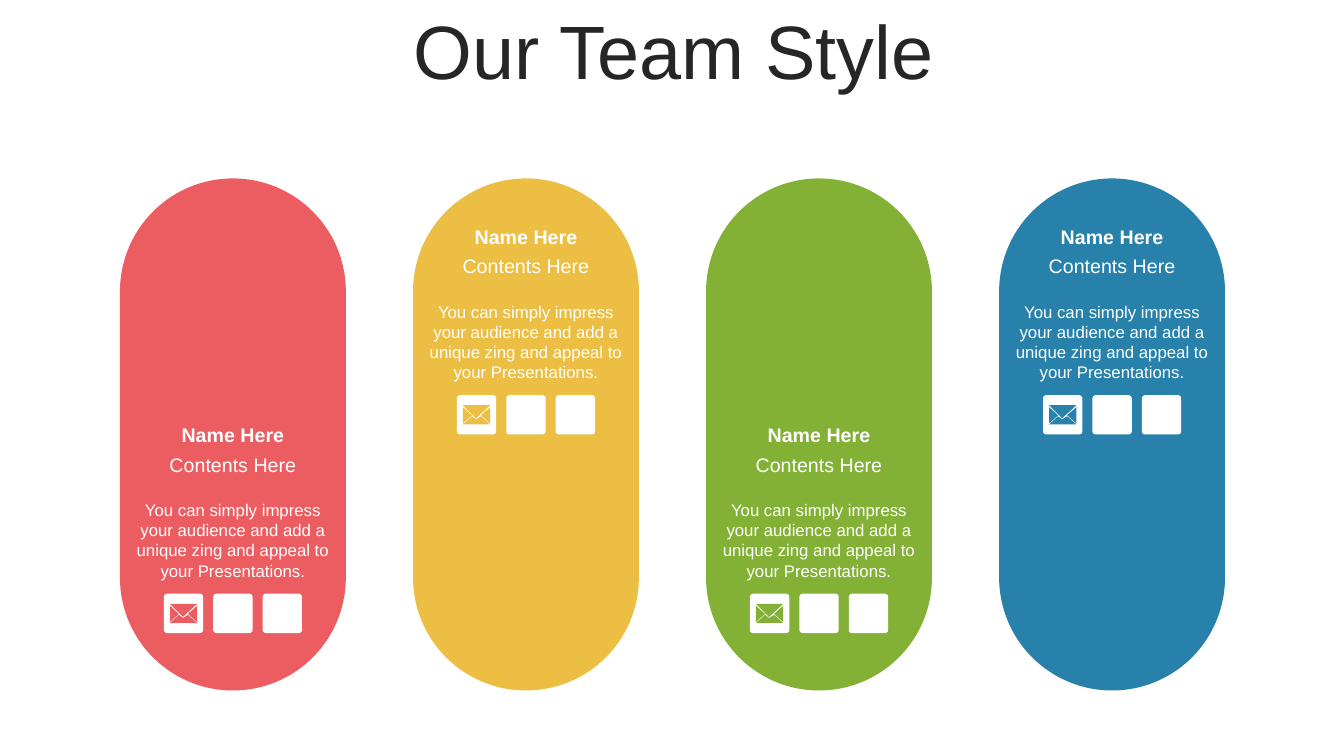
"""Build the team slide with four coloured member pills."""
from dataclasses import dataclass

from pptx import Presentation
from pptx.dml.color import RGBColor
from pptx.enum.shapes import MSO_SHAPE
from pptx.enum.text import MSO_ANCHOR, MSO_AUTO_SIZE, PP_ALIGN
from pptx.util import Inches, Pt

ROUNDED = MSO_SHAPE.ROUNDED_RECTANGLE
MIDDLE, TOP = MSO_ANCHOR.MIDDLE, MSO_ANCHOR.TOP
NO_AUTOFIT = MSO_AUTO_SIZE.NONE
CENTER = PP_ALIGN.CENTER

TITLE = "Our Team Style"
NAME = "Name Here"
ROLE = "Contents Here"
BIO = ("You can simply impress your audience and add a unique zing "
       "and appeal to your Presentations.")
HIGH, LOW = 2.21, 4.18
MEMBERS = [
    (NAME, ROLE, BIO, "EC5D62", LOW),
    (NAME, ROLE, BIO, "EDBE44", HIGH),
    (NAME, ROLE, BIO, "82B135", LOW),
    (NAME, ROLE, BIO, "2781AB", HIGH),
]
ENVELOPE_FOLDS = [
    [(24, 21), (19, 24), (15, 21), (6, 29), (33, 29)],
    [(33, 12), (25, 19), (24, 20), (33, 28)],
    [(6, 12), (6, 28), (15, 20)],
    [(6, 10), (19, 23), (33, 10)],
]


@dataclass(frozen=True)
class Theme:
    font: str = "Arial"
    title_color: str = "262626"
    light: str = "FFFFFF"
    title_size: int = 54
    name_size: int = 14
    bio_size: int = 12


THEME = Theme()
FIRST_LEFT, LAST_LEFT = 1.19, 9.91
PILL_TOP, PILL_WIDTH, PILL_HEIGHT = 1.77, 2.24, 5.08
PILL_PITCH = (LAST_LEFT - FIRST_LEFT) / (len(MEMBERS) - 1)
ROLE_DROP, BIO_DROP, ICON_DROP = 0.29, 0.73, 1.71
LINE_HEIGHT, BIO_HEIGHT = 0.27, 0.91
ICON_COUNT, ICON_SIZE, ICON_PITCH = 3, 0.39, 0.49
ICON_INSET = (PILL_WIDTH - ICON_SIZE - ICON_PITCH * (ICON_COUNT - 1)) / 2


def paint(shape, color):
    shape.shadow.inherit = False
    shape.fill.solid()
    shape.fill.fore_color.rgb = RGBColor.from_string(color)
    shape.line.fill.background()


def write(frame, text, size, color, anchor, bold=False):
    frame.text = text
    frame.word_wrap = True
    frame.auto_size = NO_AUTOFIT
    frame.vertical_anchor = anchor
    paragraph = frame.paragraphs[0]
    paragraph.alignment = CENTER
    font = paragraph.runs[0].font
    font.name, font.size, font.bold = THEME.font, Pt(size), bold
    font.color.rgb = RGBColor.from_string(color)


def add_rounded(slide, left, top, width, height, corner, color):
    rounded = slide.shapes.add_shape(
        ROUNDED, Inches(left), Inches(top), Inches(width), Inches(height))
    rounded.adjustments[0] = corner
    paint(rounded, color)


def add_label(slide, left, top, height, text, size, anchor, bold=False):
    label = slide.shapes.add_textbox(
        Inches(left), Inches(top), Inches(PILL_WIDTH), Inches(height))
    write(label.text_frame, text, size, THEME.light, anchor, bold)


def add_envelope(slide, left, top, color):
    builder = slide.shapes.build_freeform(*ENVELOPE_FOLDS[0][0], scale=Inches(0.01))
    for fold in ENVELOPE_FOLDS:
        builder.move_to(*fold[0])
        builder.add_line_segments(fold[1:], close=True)
    paint(builder.convert_to_shape(Inches(left), Inches(top)), color)


def add_member(slide, left, name, role, bio, color, top):
    add_rounded(slide, left, PILL_TOP, PILL_WIDTH, PILL_HEIGHT, 0.5, color)
    add_label(slide, left, top, LINE_HEIGHT, name, THEME.name_size, MIDDLE, True)
    add_label(slide, left, top + ROLE_DROP, LINE_HEIGHT, role, THEME.name_size, MIDDLE)
    add_label(slide, left, top + BIO_DROP, BIO_HEIGHT, bio, THEME.bio_size, TOP)
    icon_left, icon_top = left + ICON_INSET, top + ICON_DROP
    for index in range(ICON_COUNT):
        add_rounded(slide, icon_left + index * ICON_PITCH, icon_top,
                    ICON_SIZE, ICON_SIZE, 0.08, THEME.light)
    add_envelope(slide, icon_left, icon_top, color)


def add_title(slide):
    title = slide.shapes.title
    title.left, title.top = Inches(0.35), Inches(0.15)
    title.width, title.height = Inches(12.66), Inches(0.79)
    write(title.text_frame, TITLE, THEME.title_size, THEME.title_color, MIDDLE)
    paragraph = title.text_frame.paragraphs[0]
    paragraph.line_spacing = 0.9
    paragraph.space_before = Pt(10)


def main():
    deck = Presentation()
    deck.slide_width, deck.slide_height = Inches(13.33), Inches(7.5)
    slide = deck.slides.add_slide(deck.slide_layouts[5])
    add_title(slide)
    for index, member in enumerate(MEMBERS):
        add_member(slide, FIRST_LEFT + index * PILL_PITCH, *member)
    deck.save("out.pptx")


if __name__ == "__main__":
    main()
